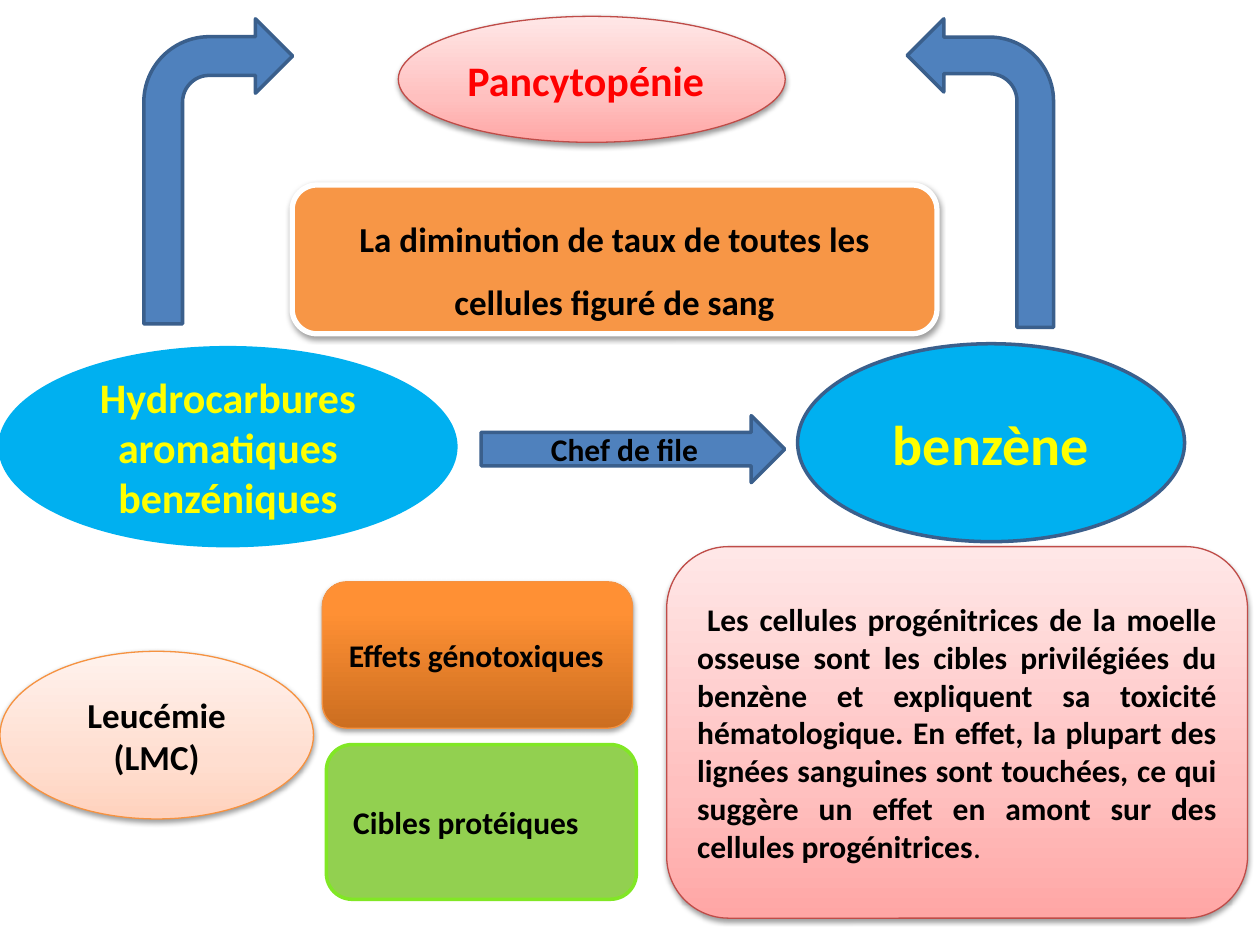
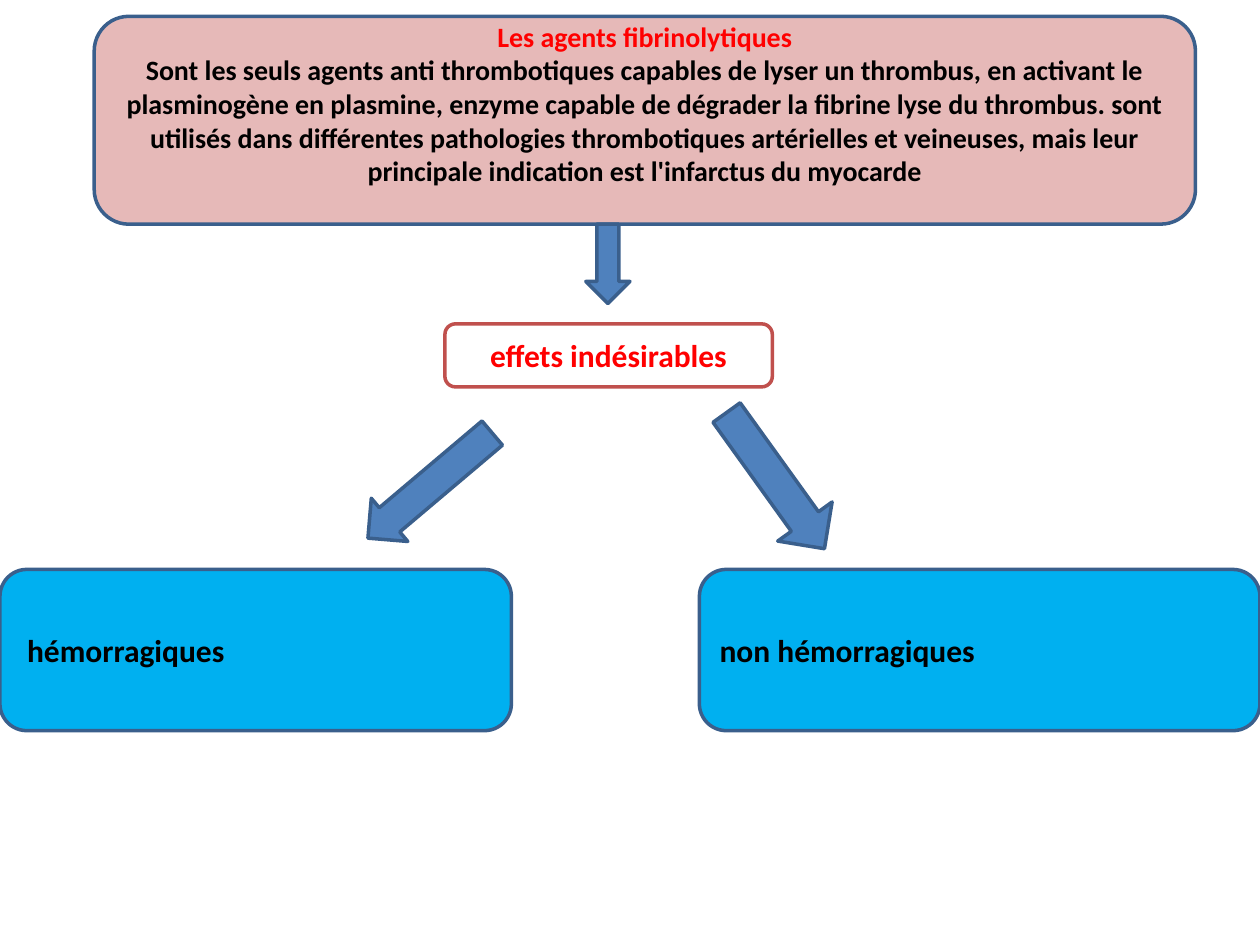
from dataclasses import dataclass

from lxml.etree import SubElement
from pptx import Presentation
from pptx.dml.color import RGBColor
from pptx.enum.shapes import MSO_SHAPE
from pptx.enum.text import MSO_ANCHOR, PP_ALIGN
from pptx.oxml.ns import qn
from pptx.util import Cm, Pt


@dataclass(frozen=True)
class Theme:
    font: str = "Calibri"
    white: str = "FFFFFF"
    black: str = "000000"
    red: str = "FF0000"
    yellow: str = "FFFF00"
    blue: str = "4F81BD"
    navy: str = "3A5F8C"
    sky: str = "00B0F0"
    orange: str = "F79646"
    orange_edge: str = "F69240"
    green: str = "92D050"
    green_edge: str = "81E725"
    rose: str = "E6B9B8"
    brick: str = "C0504D"
    brick_edge: str = "BF4C48"
    # Gradients run from bottom to top: (position in percent, colour)
    pink_fade: tuple = ((0, "FFA6A5"), (35, "FFC0BF"), (100, "FFE7E7"))
    peach_fade: tuple = ((0, "FFD2BD"), (35, "FFDED0"), (100, "FFF2ED"))
    orange_fade: tuple = ((0, "CC6E20"), (80, "FF9034"), (100, "FF9136"))
    small: int = 16
    body: int = 18
    medium: int = 20
    large: int = 24
    huge: int = 32
    thin: float = 0.75
    line: float = 2
    thick: float = 3


class Builder:
    """Holds the theme and the current slide, and draws each kind of element."""

    def __init__(self, deck, theme):
        self.deck = deck
        self.theme = theme
        self.page = None

    def new_page(self):
        self.page = self.deck.slides.add_slide(self.deck.slide_layouts[6])

    def shape(self, kind, place, fill, edge, width=None, shadow=False):
        shape = self.page.shapes.add_shape(kind, *map(Cm, place))
        shape.shadow.inherit = False
        if isinstance(fill, tuple):
            self.fade(shape, fill)
        else:
            shape.fill.solid()
            shape.fill.fore_color.rgb = RGBColor.from_string(fill)
        shape.line.color.rgb = RGBColor.from_string(edge)
        shape.line.width = Pt(width or self.theme.line)
        if shadow:
            self.drop_shadow(shape)
        return shape

    def fade(self, shape, stops):
        shape.fill.gradient()
        shape.fill.gradient_angle = 90
        stop_list = shape._element.spPr.find(".//" + qn("a:gsLst"))
        for stop in list(stop_list):
            stop_list.remove(stop)
        for position, color in stops:
            stop = SubElement(stop_list, qn("a:gs"), pos=str(position * 1000))
            SubElement(stop, qn("a:srgbClr"), val=color)

    def drop_shadow(self, shape):
        effects = shape._element.spPr.find(qn("a:effectLst"))
        shadow = SubElement(effects, qn("a:outerShdw"), blurRad=str(Pt(3.1)),
                            dist=str(Pt(1.6)), dir="5400000", rotWithShape="0")
        color = SubElement(shadow, qn("a:srgbClr"), val=self.theme.black)
        SubElement(color, qn("a:alpha"), val="38000")

    def arrow(self, kind, place, rotation=0, adjust=(), mirrored=False):
        arrow = self.shape(kind, place, self.theme.blue, self.theme.navy)
        arrow.rotation = rotation
        for index, value in enumerate(adjust):
            arrow.adjustments[index] = value
        if mirrored:
            arrow._element.spPr.find(qn("a:xfrm")).set("flipH", "1")
        return arrow

    def label(self, shape, lines, size, color=None, align=PP_ALIGN.CENTER,
              indent=0, spacing=None):
        frame = shape.text_frame
        frame.word_wrap = True
        frame.vertical_anchor = MSO_ANCHOR.MIDDLE
        frame.text = "\n".join(lines)
        for para in frame.paragraphs:
            para.alignment = align
            if spacing:
                para.line_spacing = spacing
            if indent:
                para._p.get_or_add_pPr().set("indent", str(Cm(indent)))
            for span in para.runs:
                self.style(span, size, color or self.theme.black)
        return frame.paragraphs

    def style(self, span, size, color, bold=True):
        span.font.name = self.theme.font
        span.font.size = Pt(size)
        span.font.bold = bold
        span.font.color.rgb = RGBColor.from_string(color)


def build_benzene_page(builder):
    theme = builder.theme
    builder.new_page()

    # Blood disorder and its definition
    disorder = builder.shape(MSO_SHAPE.OVAL, (8.03, 0.33, 7.8, 2.54), theme.pink_fade,
                             theme.brick_edge, theme.thin, shadow=True)
    builder.label(disorder, ["Pancytopénie"], theme.large, theme.red, PP_ALIGN.LEFT)
    definition = builder.shape(MSO_SHAPE.ROUNDED_RECTANGLE, (5.89, 3.73, 13, 3),
                               theme.orange, theme.white, theme.thick, shadow=True)
    builder.label(definition,
                  ["La diminution de taux de toutes les cellules figuré de sang"],
                  theme.medium, spacing=1.5)

    # Chemical family and its leading member
    family = builder.shape(MSO_SHAPE.OVAL, (0, 7.01, 9.19, 3.99), theme.sky, theme.sky)
    builder.label(family, ["Hydrocarbures aromatiques benzéniques"],
                  theme.large, theme.yellow)
    benzene = builder.shape(MSO_SHAPE.OVAL, (16.08, 6.93, 7.8, 3.99),
                            theme.sky, theme.navy)
    builder.label(benzene, ["benzène"], theme.huge, theme.yellow)
    leader = builder.arrow(MSO_SHAPE.RIGHT_ARROW, (9.7, 8.38, 6.12, 1.35))
    builder.label(leader, ["Chef de file"], theme.body)

    # Arrows up to the disorder
    builder.arrow(MSO_SHAPE.BENT_ARROW, (2.9, 0.38, 3, 6.15),
                  adjust=(0.26, 0.25, 0.25, 0.44))
    builder.arrow(MSO_SHAPE.BENT_ARROW, (18.29, 0.38, 2.95, 6.22), mirrored=True)

    # Explanation of the blood toxicity
    toxicity = builder.shape(MSO_SHAPE.ROUNDED_RECTANGLE, (13.44, 11.02, 11.71, 7.49),
                             theme.pink_fade, theme.brick_edge, theme.thin, shadow=True)
    paras = builder.label(toxicity, [
        "Les cellules progénitrices de la moelle osseuse sont les cibles privilégiées "
        "du benzène et expliquent sa toxicité hématologique. En effet, la plupart des "
        "lignées sanguines sont touchées, ce qui suggère un effet en amont sur des "
        "cellules progénitrices"], theme.body, align=PP_ALIGN.JUSTIFY, indent=0.2)
    full_stop = paras[0].add_run()
    full_stop.text = "."
    builder.style(full_stop, theme.body, theme.black, bold=False)

    # Mechanisms and resulting disease
    genotoxic = builder.shape(MSO_SHAPE.ROUNDED_RECTANGLE, (6.5, 11.73, 6.25, 2.95),
                              theme.orange_fade, theme.orange_edge, theme.thin,
                              shadow=True)
    proteins = builder.shape(MSO_SHAPE.ROUNDED_RECTANGLE, (6.58, 15.01, 6.25, 3.12),
                             theme.green, theme.green_edge)
    for box, name in ((genotoxic, "Effets génotoxiques"),
                      (proteins, "Cibles protéiques")):
        builder.label(box, [name], theme.body, align=PP_ALIGN.LEFT, indent=0.14)
    leukaemia = builder.shape(MSO_SHAPE.OVAL, (0, 13.13, 6.32, 3.38), theme.peach_fade,
                              theme.orange_edge, theme.thin, shadow=True)
    builder.label(leukaemia, ["Leucémie", "(LMC)"], theme.medium)


def build_fibrinolytic_page(builder):
    theme = builder.theme
    builder.new_page()

    # Definition of the agents
    agents = builder.shape(MSO_SHAPE.ROUNDED_RECTANGLE, (1.9, 0.33, 22.2, 4.19),
                           theme.rose, theme.navy)
    agents.text_frame.margin_bottom = Cm(0.81)
    paras = builder.label(agents, [
        "Les agents fibrinolytiques",
        "Sont les seuls agents anti thrombotiques capables de lyser un thrombus, en "
        "activant le plasminogène en plasmine, enzyme capable de dégrader la fibrine "
        "lyse du thrombus. sont utilisés dans différentes pathologies thrombotiques "
        "artérielles et veineuses, mais leur principale indication est l'infarctus du "
        "myocarde"], theme.small)
    builder.style(paras[0].runs[0], theme.small, theme.red)

    # Side effects and the arrows around them
    builder.arrow(MSO_SHAPE.DOWN_ARROW, (11.81, 4.52, 0.89, 1.6))
    effects = builder.shape(MSO_SHAPE.ROUNDED_RECTANGLE, (8.97, 6.53, 6.6, 1.27),
                            theme.white, theme.brick)
    builder.label(effects, ["effets indésirables"], theme.body, theme.red)
    builder.arrow(MSO_SHAPE.DOWN_ARROW, (8.1, 8.15, 1.14, 3.28), 49.8, (0.56, 0.5))
    builder.arrow(MSO_SHAPE.DOWN_ARROW, (14.96, 8, 1.35, 3.38), 324.3)

    # Two classes of side effects
    for left, width, name, indent in ((0, 10.31, "hémorragiques", 0.14),
                                      (14.1, 11.3, "non hémorragiques", 0)):
        box = builder.shape(MSO_SHAPE.ROUNDED_RECTANGLE, (left, 11.48, width, 3.25),
                            theme.sky, theme.navy)
        builder.label(box, [name], theme.body, align=PP_ALIGN.LEFT, indent=indent)


def main():
    deck = Presentation()
    deck.slide_width, deck.slide_height = Cm(25.4), Cm(19.05)
    builder = Builder(deck, Theme())
    build_benzene_page(builder)
    build_fibrinolytic_page(builder)
    deck.save("out.pptx")


if __name__ == "__main__":
    main()
